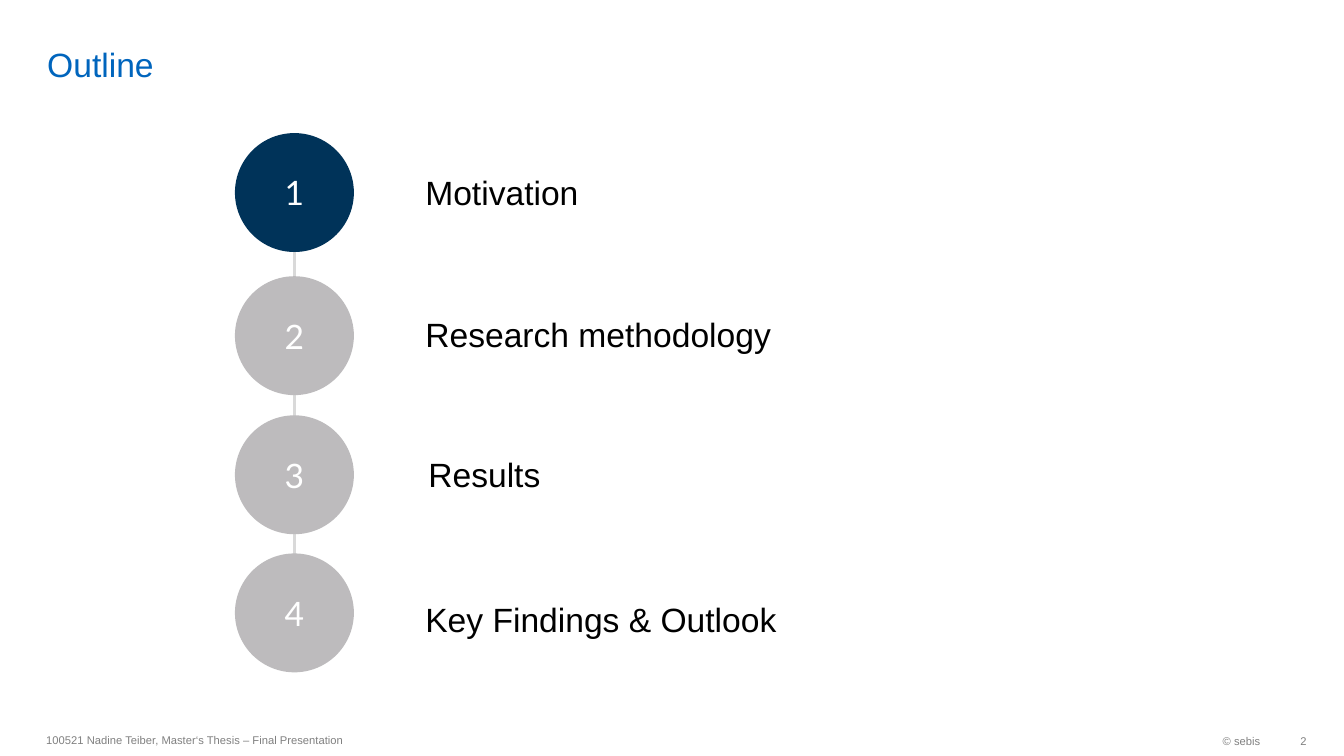
from lxml import etree
from pptx import Presentation
from pptx import util as u
from pptx.dml.color import RGBColor
from pptx.enum import shapes, text
from pptx.oxml.ns import qn

BLUE, NAVY, SILVER = "0065BD", "003359", "BDBBBD"
LINE_GREY, FOOTER_GREY = "D9D9D9", "808080"
BLACK, WHITE = "000000", "FFFFFF"

CIRCLE_LEFT, CIRCLE_SIZE = 2.33, 1.18
# Section name, circle top, label left, label top
SECTIONS = [
    ("Motivation", 1.32, 4.12, 1.66),
    ("Research methodology", 2.74, 4.12, 3.07),
    ("Results", 4.12, 4.15, 4.45),
    ("Key Findings & Outlook", 5.49, 4.12, 5.89),
]


def color(value):
    return RGBColor.from_string(value)


class OutlineSlide:
    font = "Arial"
    number_font = "Lato"
    size = 24
    footer_size = 8

    def __init__(self, deck):
        self.page = deck.slides.add_slide(deck.slide_layouts[6])

    def add_words(self, frame, words, size, ink, font, align, anchor):
        frame.vertical_anchor = anchor
        para = frame.paragraphs[0]
        para.alignment = align
        span = para.add_run()
        span.text = words
        span.font.size = u.Pt(size)
        span.font.name = font
        span.font.color.rgb = color(ink)

    def label(self, words, left, top, width, height, ink=BLACK, size=size,
              align=text.PP_ALIGN.LEFT, anchor=text.MSO_ANCHOR.TOP, wrap=True):
        box = self.page.shapes.add_textbox(
            u.Inches(left), u.Inches(top), u.Inches(width), u.Inches(height))
        box.text_frame.word_wrap = wrap
        self.add_words(box.text_frame, words, size, ink, self.font, align, anchor)
        return box.text_frame

    def title(self, words):
        frame = self.label(words, 0.37, 0.05, 11.58, 0.79, ink=BLUE,
                           anchor=text.MSO_ANCHOR.BOTTOM)
        frame.margin_top = frame.margin_bottom = 0

    def footer(self, words, left, top, width, align=text.PP_ALIGN.RIGHT, wrap=False):
        return self.label(words, left, top, width, 0.32, FOOTER_GREY,
                          self.footer_size, align, text.MSO_ANCHOR.MIDDLE, wrap)

    def circle(self, number, top, fill):
        disc = self.page.shapes.add_shape(
            shapes.MSO_SHAPE.OVAL, u.Inches(CIRCLE_LEFT), u.Inches(top),
            u.Inches(CIRCLE_SIZE), u.Inches(CIRCLE_SIZE))
        disc.shadow.inherit = False
        disc.fill.solid()
        disc.fill.fore_color.rgb = color(fill)
        disc.line.fill.background()
        self.add_words(disc.text_frame, str(number), self.size, WHITE,
                       self.number_font, text.PP_ALIGN.CENTER, text.MSO_ANCHOR.MIDDLE)

    def vertical_line(self, x, top, bottom):
        line = self.page.shapes.add_connector(
            shapes.MSO_CONNECTOR.STRAIGHT,
            u.Inches(x), u.Inches(top), u.Inches(x), u.Inches(bottom))
        line.line.color.rgb = color(LINE_GREY)
        line.line.width = u.Pt(2)
        etree.SubElement(line._element.spPr, qn("a:effectLst"))


def main():
    deck = Presentation()
    deck.slide_width, deck.slide_height = u.Inches(13.33), u.Inches(7.5)
    slide = OutlineSlide(deck)

    slide.title("Outline")
    slide.footer("© sebis", 10.26, 7.19, 2.34)
    slide.footer("2", 12.6, 7.19, 0.36).margin_right = 0
    slide.footer("100521 Nadine Teiber, Master‘s Thesis – Final Presentation",
                 0.36, 7.18, 6.3, align=text.PP_ALIGN.LEFT, wrap=True)

    slide.vertical_line(CIRCLE_LEFT + CIRCLE_SIZE / 2, 2.5, 6.14)
    for number, (name, circle_top, left, top) in enumerate(SECTIONS, start=1):
        slide.circle(number, circle_top, NAVY if number == 1 else SILVER)
        slide.label(name, left, top, 5.67, 0.5)

    deck.save("out.pptx")


if __name__ == "__main__":
    main()
